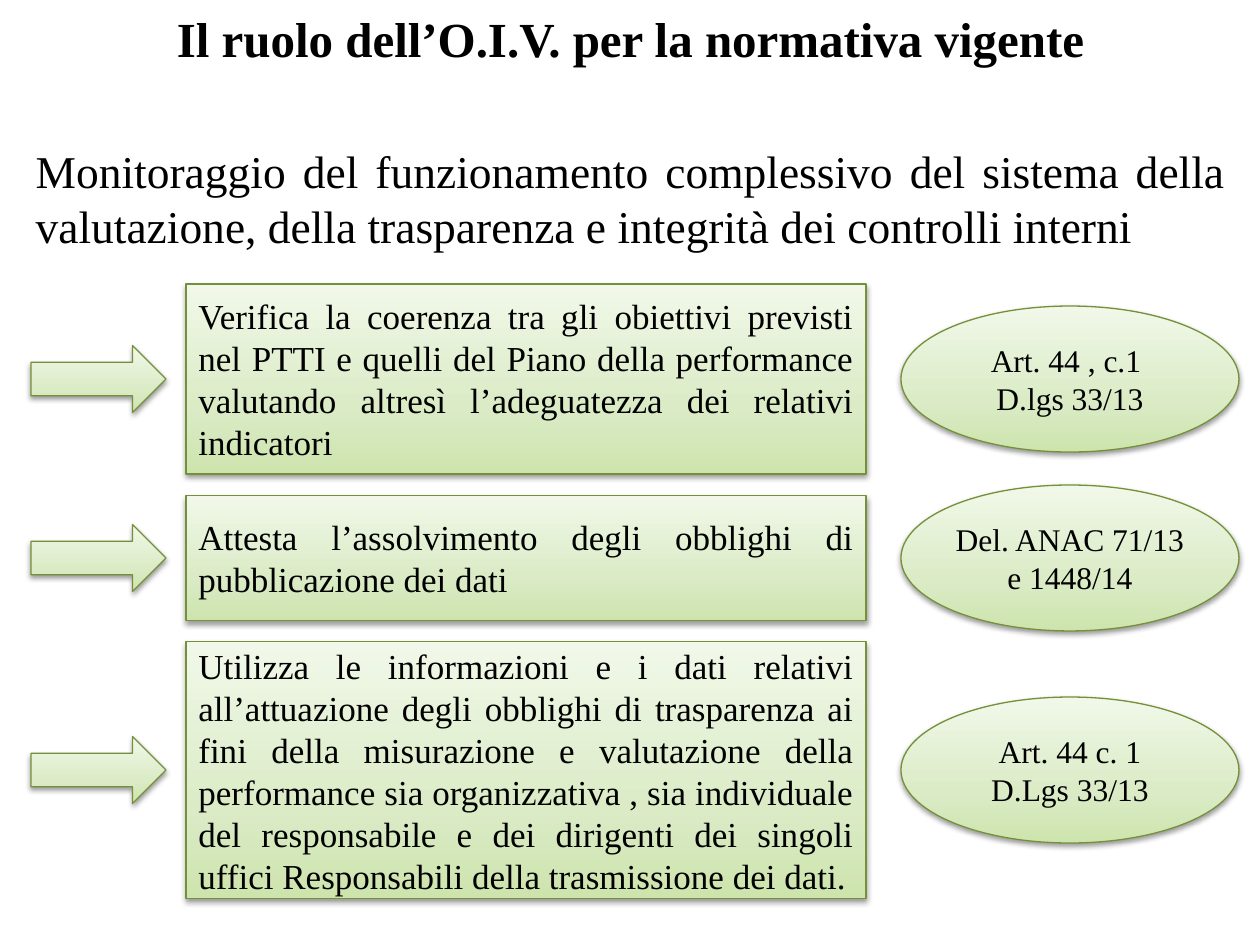
from copy import deepcopy
from dataclasses import dataclass

from lxml.etree import SubElement
from pptx import Presentation
from pptx.dml.color import RGBColor
from pptx.enum.shapes import MSO_SHAPE as Shape
from pptx.enum.text import MSO_ANCHOR as Anchor, MSO_AUTO_SIZE as AutoSize, PP_ALIGN as Align
from pptx.oxml.ns import qn
from pptx.util import Emu, Pt

PX_PER_INCH = 126
FONT = "Times New Roman"
BLACK = RGBColor(0x00, 0x00, 0x00)
OUTLINE = RGBColor(0x74, 0x91, 0x39)
GRADIENT = (
    (0, RGBColor(0xCD, 0xE4, 0xAD)),
    (0.35, RGBColor(0xDB, 0xEB, 0xC6)),
    (1, RGBColor(0xF1, 0xF8, 0xE9)),
)


@dataclass(frozen=True)
class Duty:
    center: int
    height: int
    text: str
    sources: tuple[str, ...]


@dataclass(frozen=True)
class Column:
    kind: Shape
    left: int
    width: int


ARROWS = Column(Shape.RIGHT_ARROW, 31, 135)
DUTIES = Column(Shape.RECTANGLE, 186, 680)
SOURCES = Column(Shape.OVAL, 901, 338)
ARROW_HEIGHT = 67
SOURCE_HEIGHT = 146

ROWS = (
    Duty(379, 190,
         "Verifica la coerenza tra gli obiettivi previsti nel PTTI e quelli del Piano della "
         "performance valutando altresì l’adeguatezza dei relativi indicatori",
         ("Art. 44 , c.1 ", "D.lgs 33/13")),
    Duty(558, 125,
         "Attesta l’assolvimento degli obblighi di pubblicazione dei dati",
         ("Del. ANAC 71/13", "e 1448/14")),
    Duty(770, 257,
         "Utilizza le informazioni e i dati relativi all’attuazione degli obblighi di "
         "trasparenza ai fini della misurazione e valutazione della performance sia "
         "organizzativa , sia individuale del responsabile e dei dirigenti dei singoli "
         "uffici Responsabili della trasmissione dei dati.",
         ("Art. 44 c. 1", "D.Lgs 33/13")),
)


def px(length: float) -> Emu:
    return Emu(round(length * 914400 / PX_PER_INCH))


def place(shape, left: int, top: int, width: int, height: int) -> None:
    shape.left, shape.top = px(left), px(top)
    shape.width, shape.height = px(width), px(height)


def write(frame, lines: tuple[str, ...], size: int, align: Align, bold: bool = False) -> None:
    frame.vertical_anchor = Anchor.MIDDLE
    for index, line in enumerate(lines):
        para = frame.add_paragraph() if index else frame.paragraphs[0]
        para.alignment = align
        para.space_before = Pt(0)
        span = para.add_run()
        span.text = line
        span.font.name = FONT
        span.font.size = Pt(size)
        span.font.bold = bold
        span.font.color.rgb = BLACK


def style(shape) -> None:
    """Give the shape the green gradient, thin outline and soft shadow."""
    shape.fill.gradient()
    shape.fill.gradient_angle = 90
    stop_list = shape._element.spPr.find(".//" + qn("a:gsLst"))
    stop_list.append(deepcopy(stop_list[-1]))
    for stop, (position, color) in zip(shape.fill.gradient_stops, GRADIENT):
        stop.position = position
        stop.color.rgb = color
    shape.line.color.rgb = OUTLINE
    shape.line.width = Pt(0.75)

    shape.shadow.inherit = False
    effects = shape._element.spPr.find(qn("a:effectLst"))
    shadow = SubElement(effects, qn("a:outerShdw"), blurRad="40000", dist="20000",
                        dir="5400000", rotWithShape="0")
    color = SubElement(shadow, qn("a:srgbClr"), val=str(BLACK))
    SubElement(color, qn("a:alpha"), val="38000")


def add_block(slide, column: Column, center: int, height: int):
    """Add a styled shape in a column, centred vertically on its row."""
    block = slide.shapes.add_shape(
        column.kind, px(column.left), px(center - height / 2), px(column.width), px(height))
    style(block)
    return block


def add_row(slide, duty: Duty) -> None:
    source = add_block(slide, SOURCES, duty.center, SOURCE_HEIGHT)
    source.text_frame.word_wrap = False
    write(source.text_frame, duty.sources, 18, Align.CENTER)
    box = add_block(slide, DUTIES, duty.center, duty.height)
    box.text_frame.word_wrap = True
    write(box.text_frame, (duty.text,), 20, Align.JUSTIFY)
    add_block(slide, ARROWS, duty.center, ARROW_HEIGHT)


def add_headings(slide) -> None:
    title, body = slide.placeholders
    place(title, 35, 6, 1191, 63)
    title.text_frame.auto_size = AutoSize.NONE
    write(title.text_frame, ("Il ruolo dell’O.I.V. per la normativa vigente",),
          28, Align.CENTER, bold=True)

    place(body, 23, 136, 1216, 124)
    body.text_frame.auto_size = AutoSize.SHAPE_TO_FIT_TEXT
    properties = body.text_frame.paragraphs[0]._p.get_or_add_pPr()
    properties.set("marL", "0")
    properties.set("indent", "0")
    SubElement(properties, qn("a:buNone"))
    write(body.text_frame,
          ("Monitoraggio del funzionamento complessivo del sistema della valutazione, "
           "della trasparenza e integrità dei controlli interni",),
          26, Align.JUSTIFY)


def main() -> None:
    deck = Presentation()
    deck.slide_width, deck.slide_height = px(1260), px(945)
    page = deck.slides.add_slide(deck.slide_layouts[1])
    add_headings(page)
    for duty in ROWS:
        add_row(page, duty)
    deck.save("out.pptx")


if __name__ == "__main__":
    main()
